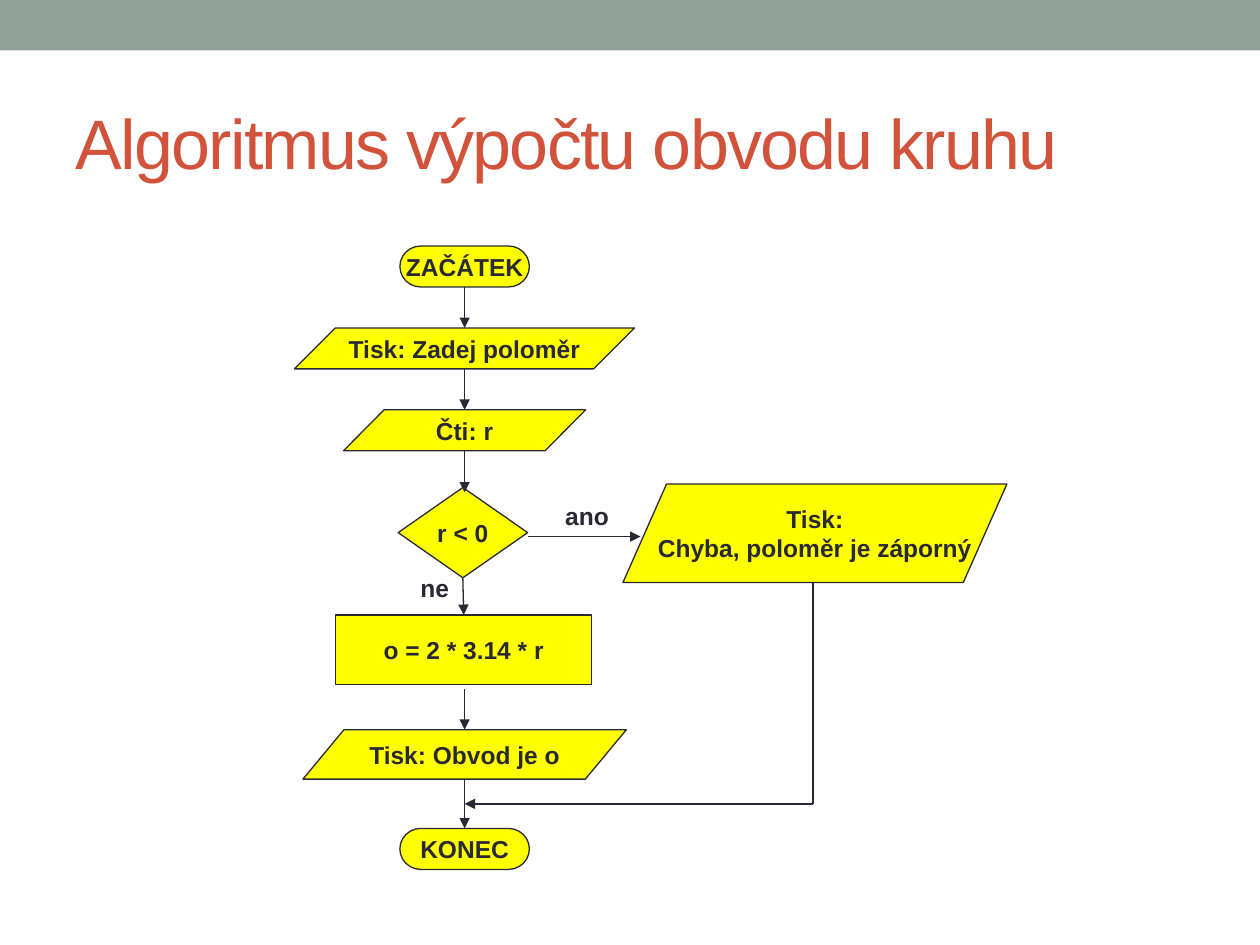
"""Build a flowchart slide for computing the circumference of a circle."""
from dataclasses import dataclass

from lxml import etree
from pptx import Presentation
from pptx.dml.color import RGBColor
from pptx.enum.shapes import MSO_CONNECTOR, MSO_SHAPE
from pptx.enum.text import MSO_ANCHOR, PP_ALIGN
from pptx.oxml.ns import qn
from pptx.util import Pt

STRAIGHT = MSO_CONNECTOR.STRAIGHT
RECTANGLE = MSO_SHAPE.RECTANGLE
TERMINATOR = MSO_SHAPE.FLOWCHART_TERMINATOR
DECISION = MSO_SHAPE.FLOWCHART_DECISION
PROCESS = MSO_SHAPE.FLOWCHART_PROCESS
PARALLELOGRAM = MSO_SHAPE.PARALLELOGRAM
MIDDLE = MSO_ANCHOR.MIDDLE
LEFT, CENTER = PP_ALIGN.LEFT, PP_ALIGN.CENTER
TOP_SIDE, BOTTOM_SIDE = 0, 2


@dataclass(frozen=True)
class Theme:
    font: str = "Arial"
    band: RGBColor = RGBColor(0x93, 0xA2, 0x99)
    title: RGBColor = RGBColor(0xD2, 0x53, 0x3C)
    ink: RGBColor = RGBColor(0x29, 0x29, 0x34)
    box: RGBColor = RGBColor(0xFF, 0xFF, 0x00)
    title_size: int = 40
    text_size: int = 14
    line_width: float = 0.75


theme = Theme()
BODY_FONT = {"name": theme.font, "size": Pt(theme.text_size), "bold": True}
TITLE_FONT = {"name": theme.font, "size": Pt(theme.title_size), "bold": False}


def write(shape, text, alignment, font_format, color):
    shape.text_frame.text = text
    shape.text_frame.vertical_anchor = MIDDLE
    for paragraph in shape.text_frame.paragraphs:
        paragraph.alignment = alignment
        for run in paragraph.runs:
            for name, value in font_format.items():
                setattr(run.font, name, value)
            run.font.color.rgb = color


presentation = Presentation()
presentation.slide_width, presentation.slide_height = Pt(720), Pt(540)
slide = presentation.slides.add_slide(presentation.slide_layouts[5])

title = slide.shapes.title
title_box = {"left": 36, "top": 41.8, "width": 648, "height": 77.8}
for name, value in title_box.items():
    setattr(title, name, Pt(value))
write(title, "Algoritmus výpočtu obvodu kruhu", LEFT, TITLE_FONT, theme.title)
title.text_frame.paragraphs[0].runs[0].font._element.set("spc", "-100")

band = slide.shapes.add_shape(RECTANGLE, 0, 0, Pt(720), Pt(28.8))
band.shadow.inherit = False
band.fill.solid()
band.fill.fore_color.rgb = theme.band
band.line.fill.background()

axis = 265.5
error_axis = 465.7
steps = [
    ("start", TERMINATOR, "ZAČÁTEK", axis, 140.6, 74, 23.4, None),
    ("prompt", PARALLELOGRAM, "Tisk: Zadej poloměr", axis, 187.4, 194.4, 23.4, 23.4),
    ("read", PARALLELOGRAM, "Čti: r", axis, 234.2, 138.4, 23.4, 23.2),
    ("test", DECISION, "r < 0", axis - 1, 278.6, 74, 51.6, None),
    ("compute", PROCESS, "o = 2 * 3.14 * r", axis - 0.5, 351.4, 146.4, 39.8, None),
    ("result", PARALLELOGRAM, "Tisk: Obvod je o", axis, 417, 184.8, 28.2, 23.4),
    ("end", TERMINATOR, "KONEC", axis, 473.4, 74, 23.4, None),
    ("error", PARALLELOGRAM, "Tisk:\nChyba, poloměr je záporný", error_axis,
     276.6, 219.4, 56.2, 24.9),
]
boxes = {}
for name, kind, text, middle, top, width, height, slant in steps:
    shape = slide.shapes.add_shape(
        kind, Pt(middle - width / 2), Pt(top), Pt(width), Pt(height))
    if slant:
        shape.adjustments[0] = slant / height
    shape.shadow.inherit = False
    shape.fill.solid()
    shape.fill.fore_color.rgb = theme.box
    shape.line.color.rgb = theme.ink
    shape.line.width = Pt(theme.line_width)
    shape.text_frame.word_wrap = False
    write(shape, text, CENTER, BODY_FONT, theme.ink)
    boxes[name] = shape

return_x, merge_y, branch_y = 464.6, 459.4, 306.6
links = [
    (axis, 164, axis, 187.4, True, "start", None),
    (axis, 210.8, axis, 234.2, True, None, None),
    (axis, 257.6, axis, 281.4, True, None, None),
    (axis - 1, 330.2, axis - 1, 351.4, True, "test", "compute"),
    (axis, 393.8, axis, 417, True, None, None),
    (axis, 445.2, axis, 473.4, True, None, "end"),
    (301.5, branch_y, 366, branch_y, True, None, None),
    (return_x, 332.8, return_x, merge_y, False, None, None),
    (return_x, merge_y, axis, merge_y, True, None, None),
]
for x1, y1, x2, y2, has_arrow, source, target in links:
    connector = slide.shapes.add_connector(STRAIGHT, Pt(x1), Pt(y1), Pt(x2), Pt(y2))
    if source:
        connector.begin_connect(boxes[source], BOTTOM_SIDE)
    if target:
        connector.end_connect(boxes[target], TOP_SIDE)
    connector.line.color.rgb = theme.ink
    connector.line.width = Pt(theme.line_width)
    if has_arrow:
        line = connector.line._get_or_add_ln()
        etree.SubElement(line, qn("a:tailEnd"), type="triangle")
    etree.SubElement(connector._element.spPr, qn("a:effectLst"))

labels = [("ne", 233.2, 323.6, 31), ("ano", 315.9, 282.8, 39.6)]
for text, left, top, width in labels:
    label = slide.shapes.add_textbox(Pt(left), Pt(top), Pt(width), Pt(24.2))
    label.text_frame.word_wrap = False
    write(label, text, LEFT, BODY_FONT, theme.ink)

presentation.save("out.pptx")
